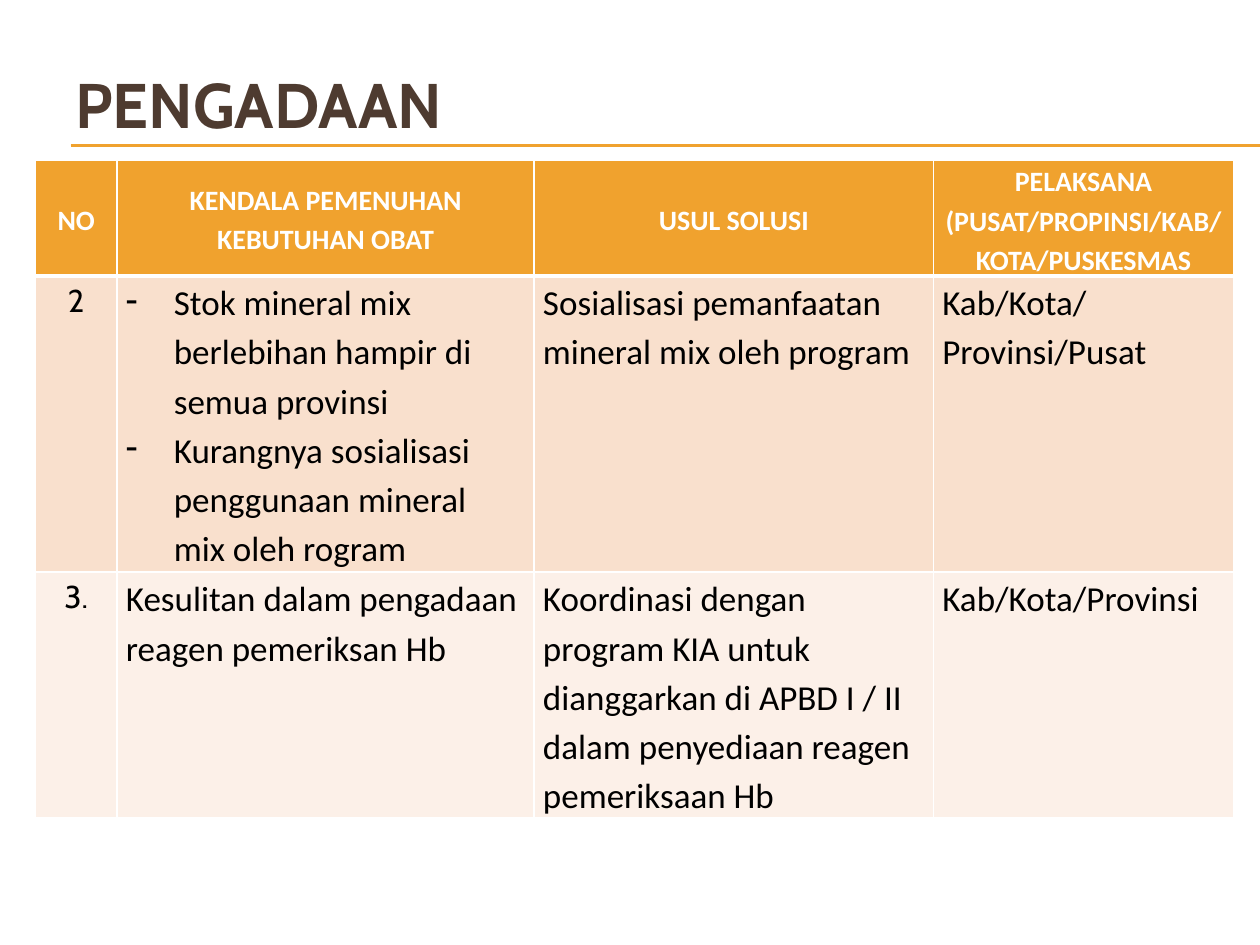
import pptx
import pptx.dml.color
import pptx.enum.shapes
import pptx.enum.text
import pptx.oxml.ns
import pptx.util
from lxml import etree

Inches = pptx.util.Inches
Pt = pptx.util.Pt
ALIGN = pptx.enum.text.PP_ALIGN
ANCHOR = pptx.enum.text.MSO_ANCHOR
qn = pptx.oxml.ns.qn

COLORS = {
    "accent": "F0A22E",
    "title": "4E3B30",
    "white": "FFFFFF",
    "black": "000000",
    "band_dark": "F9E0CD",
    "band_light": "FCF0E8",
}
TITLE = "PENGADAAN"
HEADINGS = [
    "NO",
    "KENDALA PEMENUHAN KEBUTUHAN OBAT",
    "USUL SOLUSI",
    "PELAKSANA (PUSAT/PROPINSI/KAB/KOTA/PUSKESMAS",
]
ISSUES = [
    (
        "2",
        ["Stok mineral mix berlebihan hampir di semua provinsi",
         "Kurangnya sosialisasi penggunaan mineral mix oleh rogram"],
        "Sosialisasi pemanfaatan mineral mix oleh program",
        "Kab/Kota/Provinsi/Pusat",
    ),
    (
        "3.",
        "Kesulitan dalam pengadaan reagen pemeriksan Hb",
        "Koordinasi dengan program KIA untuk dianggarkan di APBD I / II "
        "dalam penyediaan reagen pemeriksaan Hb",
        "Kab/Kota/Provinsi",
    ),
]
COLUMN_WIDTHS = [0.65, 3.31, 3.17, 2.38]
ROW_HEIGHTS = [0.92, 2.35, 1.95]
RULE_TOPS = [1.15, 1.16]


def rgb(name):
    return pptx.dml.color.RGBColor.from_string(COLORS[name])


def style(paragraph, font, size, color, bold=False):
    paragraph.font.name = font
    paragraph.font.size = Pt(size)
    paragraph.font.bold = bold
    paragraph.font.color.rgb = rgb(color)


def add_rule(slide, top):
    rule = slide.shapes.add_connector(
        pptx.enum.shapes.MSO_CONNECTOR.STRAIGHT,
        Inches(0.56), Inches(top), Inches(10), Inches(top))
    rule.line.color.rgb = rgb("accent")
    rule.line.width = Pt(0.75)
    etree.SubElement(rule._element.spPr, qn("a:effectLst"))


def add_title(slide):
    title = slide.shapes.add_textbox(
        Inches(0.5), Inches(0.36), Inches(9.5), Inches(0.92))
    frame = title.text_frame
    frame.word_wrap = True
    frame.vertical_anchor = ANCHOR.MIDDLE
    frame.text = TITLE
    style(frame.paragraphs[0], "Cabin", 36, "title", True)


def set_borders(cell, bottom_width):
    properties = cell._tc.get_or_add_tcPr()
    for side, width in (("L", 1), ("R", 1), ("T", 1), ("B", bottom_width)):
        border = etree.SubElement(properties, qn(f"a:ln{side}"), w=str(Pt(width)))
        fill = etree.SubElement(border, qn("a:solidFill"))
        etree.SubElement(fill, qn("a:srgbClr"), val=COLORS["white"])


def add_dash(paragraph):
    properties = paragraph._p.get_or_add_pPr()
    properties.set("marL", str(Inches(0.38)))
    properties.set("indent", str(-Inches(0.38)))
    bullet = etree.Element(qn("a:buChar"), char="-")
    properties.find(qn("a:defRPr")).addprevious(bullet)


def fill_cell(cell, content, row, column):
    is_heading = row == 0
    is_number = column == 0 and not is_heading
    set_borders(cell, 3 if is_heading else 1)
    cell.fill.solid()
    cell.fill.fore_color.rgb = rgb(
        "accent" if is_heading else ("band_light", "band_dark")[row % 2])
    cell.vertical_anchor = ANCHOR.MIDDLE if is_heading else ANCHOR.TOP
    if not is_number:
        cell.margin_left = cell.margin_right = Inches(0.07)
        cell.margin_top = cell.margin_bottom = 0
    is_list = isinstance(content, list)
    cell.text_frame.text = "\n".join(content) if is_list else content
    for paragraph in cell.text_frame.paragraphs:
        if is_heading:
            style(paragraph, "Calibri", 16, "white", True)
        elif is_number:
            style(paragraph, "Cabin", 18, "black")
        else:
            style(paragraph, "Calibri", 20, "black")
        paragraph.alignment = ALIGN.CENTER if is_heading or is_number else ALIGN.LEFT
        if not is_number:
            paragraph.line_spacing = 1.15
        if is_list:
            add_dash(paragraph)


def add_issue_table(slide):
    rows = [HEADINGS, *ISSUES]
    issues = slide.shapes.add_table(
        len(rows), len(HEADINGS), Inches(0.28), Inches(1.27),
        Inches(sum(COLUMN_WIDTHS)), Inches(sum(ROW_HEIGHTS))).table
    for column, width in zip(issues.columns, COLUMN_WIDTHS):
        column.width = Inches(width)
    for r, (contents, height) in enumerate(zip(rows, ROW_HEIGHTS)):
        issues.rows[r].height = Inches(height)
        for c, content in enumerate(contents):
            fill_cell(issues.cell(r, c), content, r, c)


def main():
    deck = pptx.Presentation()
    deck.slide_width, deck.slide_height = Inches(10), Inches(7.5)
    slide = deck.slides.add_slide(deck.slide_layouts[6])
    for top in RULE_TOPS:
        add_rule(slide, top)
    add_title(slide)
    add_issue_table(slide)
    deck.save("out.pptx")


if __name__ == "__main__":
    main()
